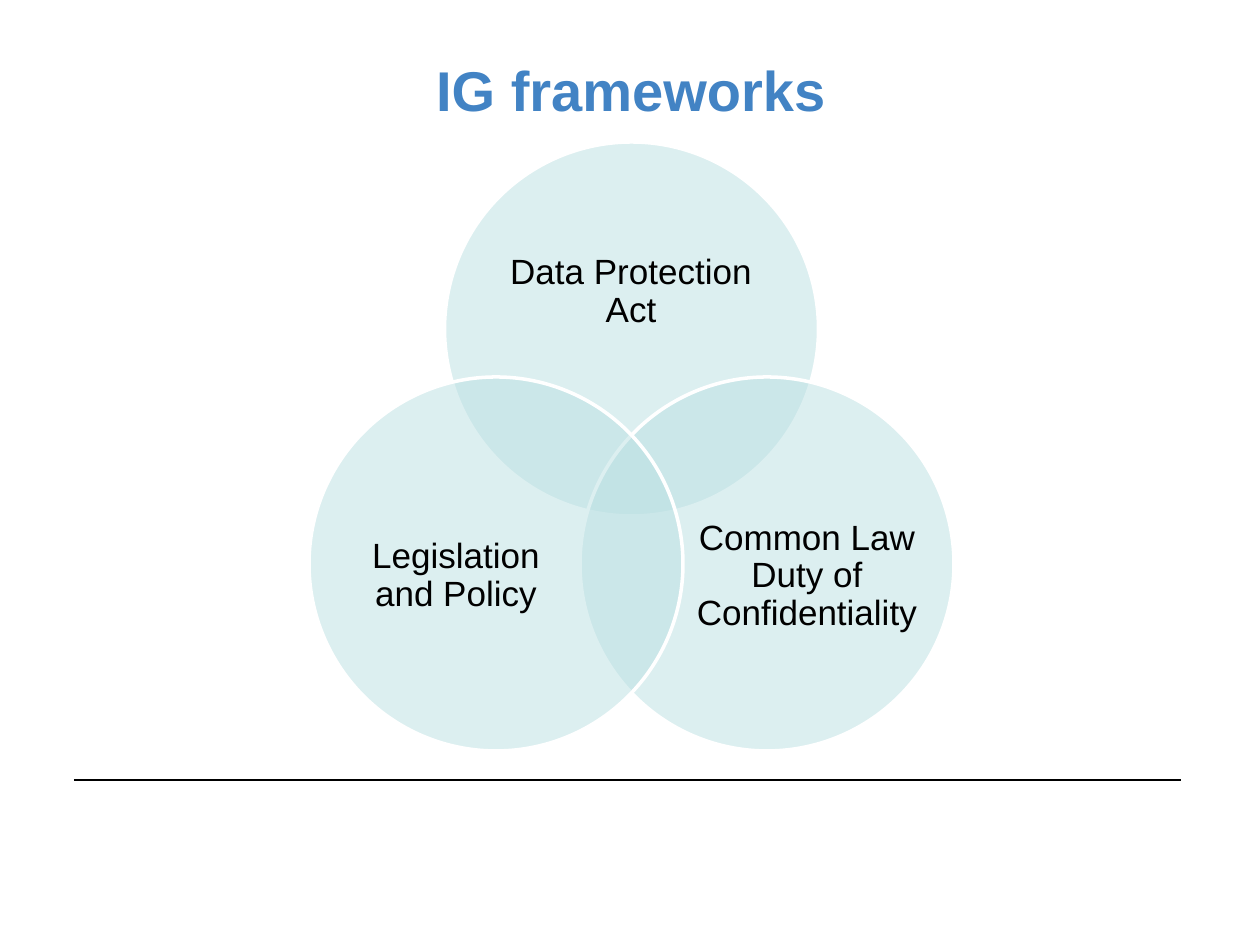
from lxml import etree
from pptx import Presentation
from pptx.dml.color import RGBColor
from pptx.enum import shapes, text
from pptx.oxml.ns import qn
from pptx.util import Pt

PX = 914400 / 126
COLORS = {"title": "4283C4", "circle": "BBE0E3", "outline": "FFFFFF", "ink": "000000"}
FONT = "Arial"
DIAMETER = 374


def px(*lengths):
    return [round(n * PX) for n in lengths]


def rgb(name):
    return RGBColor.from_string(COLORS[name])


def add_text(s, box, words, size, color, bold=False, spacing=1.0):
    tf = s.shapes.add_textbox(*px(*box)).text_frame
    tf.word_wrap = True
    tf.vertical_anchor = text.MSO_ANCHOR.MIDDLE
    tf.margin_left = tf.margin_right = tf.margin_top = tf.margin_bottom = 0
    p = tf.paragraphs[0]
    p.text = words
    p.alignment = text.PP_ALIGN.CENTER
    p.line_spacing = spacing
    font = p.runs[0].font
    font.name, font.size, font.bold = FONT, Pt(size), bold
    font.color.rgb = rgb(color)


def add_rule(s, x, y, width):
    line = s.shapes.add_connector(
        shapes.MSO_CONNECTOR.STRAIGHT, *px(x, y, x + width, y))
    line.line.color.rgb = rgb("ink")
    line.line.width = Pt(1)
    etree.SubElement(line._element.spPr, qn("a:effectLst"))


def add_circle(s, x, y):
    sp = s.shapes.add_shape(
        shapes.MSO_SHAPE.OVAL, *px(x, y, DIAMETER, DIAMETER))
    sp.shadow.inherit = False
    sp.fill.solid()
    sp.fill.fore_color.rgb = rgb("circle")
    color = sp.fill._xPr.find(qn("a:solidFill"))[0]
    etree.SubElement(color, qn("a:alpha"), val="50000")
    sp.line.color.rgb = rgb("outline")
    sp.line.width = Pt(2)


def add_venn(s, x, y, width, height):
    right, bottom = width - DIAMETER, height - DIAMETER
    sets = [
        ("Data Protection Act", right / 2, 0, (49, 66, 275, 169)),
        ("Common Law Duty of Confidentiality", right, bottom, (115, 97, 224, 205)),
        ("Legislation and Policy", 0, bottom, (35, 97, 224, 205)),
    ]
    for words, dx, dy, (left, top, w, h) in sets:
        cx, cy = x + dx, y + dy
        add_circle(s, cx, cy)
        add_text(s, (cx + left, cy + top, w, h), words, 20, "ink", spacing=0.9)


def main():
    prs = Presentation()
    prs.slide_width, prs.slide_height = px(1260, 945)
    s = prs.slides.add_slide(prs.slide_layouts[6])
    add_rule(s, 74, 780, 1107)
    add_text(s, (64, 26, 1134, 127), "IG frameworks", 32, "title", bold=True)
    add_venn(s, 309, 142, 645, 609)
    prs.save("out.pptx")


if __name__ == "__main__":
    main()
